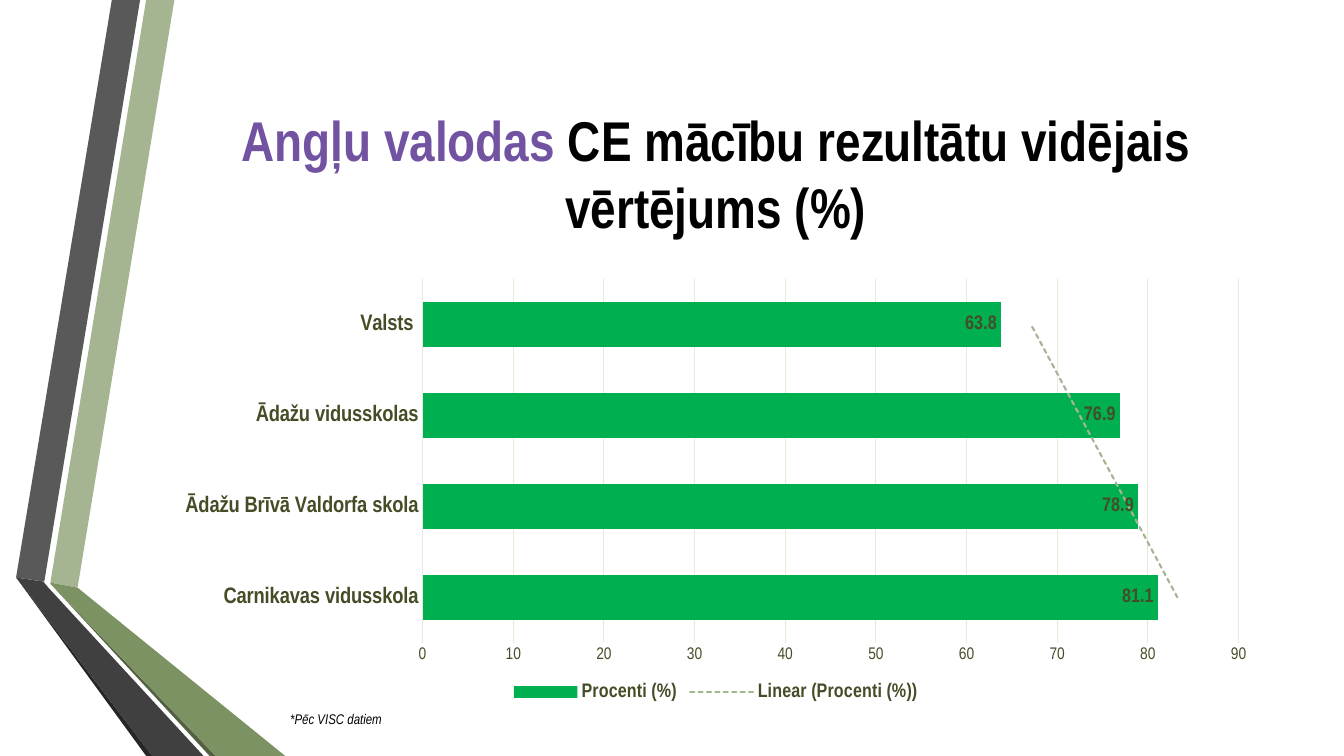
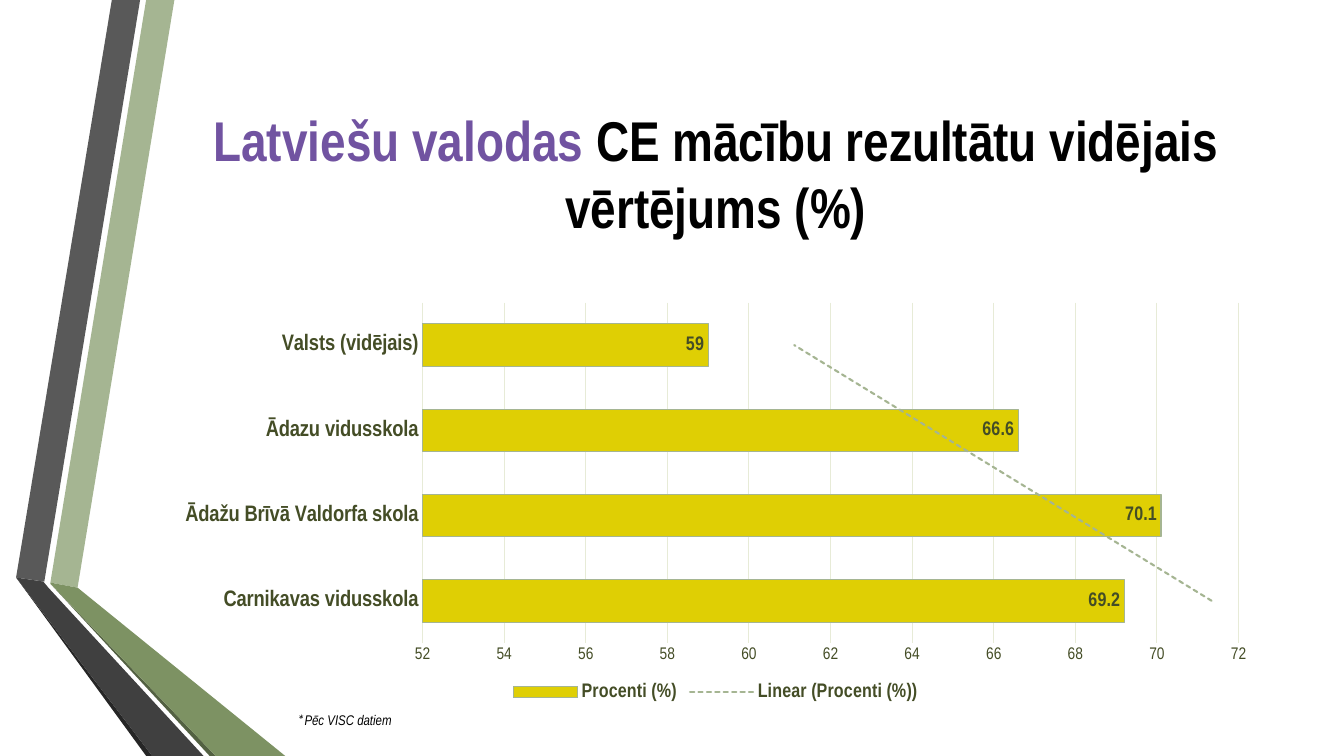
from lxml import etree
from pptx import Presentation
from pptx.chart.data import CategoryChartData
from pptx.dml.color import RGBColor
from pptx.enum.chart import XL_CHART_TYPE as ChartType
from pptx.enum.chart import XL_LABEL_POSITION as LabelPosition
from pptx.enum.chart import XL_LEGEND_POSITION as LegendPosition
from pptx.enum.chart import XL_TICK_MARK as TickMark
from pptx.enum.text import MSO_ANCHOR, MSO_AUTO_SIZE, PP_ALIGN
from pptx.oxml import parse_xml
from pptx.oxml.ns import nsdecls
from pptx.util import Inches, Pt

BLACK = RGBColor(0x00, 0x00, 0x00)
PURPLE = RGBColor(0x71, 0x53, 0xA1)
OLIVE = RGBColor(0x44, 0x4D, 0x26)
SAGE = RGBColor(0xA5, 0xB5, 0x92)
PALE = RGBColor(0xE7, 0xEB, 0xD7)
GREEN = RGBColor(0x00, 0xB0, 0x50)
YELLOW = RGBColor(0xDF, 0xCF, 0x04)

NARROW = "Arial Narrow"
BODY = "Calibri"
LEFT, WIDTH = 1.62, 10.96
CHART_BOTTOM = 7
SERIES = "Procenti (%)"

RIBBONS = [
    (SAGE, [(0.5, 5.78), (0.77, 5.83), (1.73, 0), (1.45, 0)]),
    (RGBColor(0x59, 0x59, 0x59), [(1.39, 0), (1.11, 0), (0.16, 5.73), (0.44, 5.77)]),
    (RGBColor(0x26, 0x26, 0x26), [(0.16, 5.73), (1.45, 7.5), (1.51, 7.5)]),
    (RGBColor(0x53, 0x61, 0x42), [(0.5, 5.79), (2.08, 7.5), (2.14, 7.5)]),
    (RGBColor(0x7D, 0x92, 0x63),
     [(0.5, 5.79), (2.14, 7.5), (2.83, 7.5), (0.77, 5.83), (0.5, 5.78)]),
    (RGBColor(0x40, 0x40, 0x40),
     [(2.02, 7.5), (0.48, 5.83), (0.43, 5.77), (0.16, 5.73), (1.51, 7.5)]),
]

SLIDES = [
    {
        "subject": "Angļu valodas ",
        "results": [("Carnikavas vidusskola", 81.1), ("Ādažu Brīvā Valdorfa skola", 78.9),
                    ("Ādažu vidusskolas", 76.9), ("Valsts ", 63.8)],
        "scale": (0, 90, 10),
        "chart_top": 2.68,
        "fill": GREEN,
        "outline": None,
        "note_left": 2.78,
        "note": [("*Pēc VISC datiem", NARROW, 10)],
    },
    {
        "subject": "Latviešu valodas ",
        "results": [("Carnikavas vidusskola", 69.2), ("Ādažu Brīvā Valdorfa skola", 70.1),
                    ("Ādazu vidusskola", 66.6), ("Valsts (vidējais)", 59)],
        "scale": (52, 72, 2),
        "chart_top": 2.92,
        "fill": YELLOW,
        "outline": SAGE,
        "note_left": 2.85,
        "note": [("*", BODY, 10.5), ("Pēc VISC datiem", NARROW, 10)],
    },
]

TRENDLINE = f"""
<c:trendline {nsdecls('c', 'a')}>
  <c:spPr><a:ln w="19050" cap="rnd">
    <a:solidFill><a:srgbClr val="{SAGE}"/></a:solidFill><a:prstDash val="sysDash"/>
  </a:ln></c:spPr>
  <c:trendlineType val="linear"/><c:dispRSqr val="0"/><c:dispEq val="0"/>
</c:trendline>"""


def set_font(font, size, color, name=NARROW, bold=False, italic=False):
    font.name, font.size = name, Pt(size)
    font.bold, font.italic = bold, italic
    font.color.rgb = color


def add_text_box(page, left, top, width, height):
    box = page.shapes.add_textbox(Inches(left), Inches(top), Inches(width), Inches(height))
    box.text_frame.word_wrap = True
    return box.text_frame


deck = Presentation()
deck.slide_width, deck.slide_height = Inches(13.33), Inches(7.5)
blank = deck.slide_layouts[6]

for content in SLIDES:
    page = deck.slides.add_slide(blank)

    for color, points in RIBBONS:
        corners = [(Inches(x), Inches(y)) for x, y in points]
        outline = page.shapes.build_freeform(*corners[0])
        outline.add_line_segments(corners[1:], close=True)
        ribbon = outline.convert_to_shape()
        ribbon.shadow.inherit = False
        ribbon.fill.solid()
        ribbon.fill.fore_color.rgb = color
        ribbon.line.fill.background()

    title = add_text_box(page, LEFT, 0.75, WIDTH, 1.92)
    title.vertical_anchor = MSO_ANCHOR.MIDDLE
    para = title.paragraphs[0]
    para.alignment = PP_ALIGN.CENTER
    for text, color in [(content["subject"], PURPLE),
                        ("CE mācību rezultātu vidējais vērtējums (%)", BLACK)]:
        span = para.add_run()
        span.text = text
        set_font(span.font, 40, color, bold=True)

    schools, percents = zip(*content["results"])
    data = CategoryChartData()
    data.categories = schools
    data.add_series(SERIES, percents)
    top = content["chart_top"]
    chart = page.shapes.add_chart(
        ChartType.BAR_CLUSTERED, Inches(LEFT), Inches(top),
        Inches(WIDTH), Inches(CHART_BOTTOM - top), data).chart
    set_font(chart.font, 10, BLACK, BODY)
    chart.has_title = False
    chart.has_legend = True
    chart.legend.position = LegendPosition.BOTTOM
    chart.legend.include_in_layout = False
    set_font(chart.legend.font, 14, OLIVE, bold=True)

    names, values = chart.category_axis, chart.value_axis
    for axis in (names, values):
        axis.major_tick_mark = axis.minor_tick_mark = TickMark.NONE
    set_font(names.tick_labels.font, 16, OLIVE, bold=True)
    set_font(values.tick_labels.font, 12, OLIVE)
    values.minimum_scale, values.maximum_scale, values.major_unit = content["scale"]
    values.format.line.fill.background()
    values.has_major_gridlines = True
    for line in (names.format.line, values.major_gridlines.format.line):
        line.color.rgb = PALE
        line.width = Pt(0.75)

    plot = chart.plots[0]
    plot.gap_width = 100
    plot.vary_by_categories = False
    bars = plot.series[0]
    bars.invert_if_negative = False
    bars.format.fill.solid()
    bars.format.fill.fore_color.rgb = content["fill"]
    if content["outline"]:
        bars.format.line.color.rgb = content["outline"]
        bars.format.line.width = Pt(0.75)
    else:
        bars.format.line.fill.background()
    labels = bars.data_labels
    labels.show_value = True
    labels.position = LabelPosition.INSIDE_END
    set_font(labels.font, 14, OLIVE, bold=True)
    bars._element.find("{*}cat").addprevious(parse_xml(TRENDLINE))

    note = add_text_box(page, content["note_left"], CHART_BOTTOM, 2.67, 0.27)
    note.auto_size = MSO_AUTO_SIZE.SHAPE_TO_FIT_TEXT
    for text, font_name, size in content["note"]:
        span = note.paragraphs[0].add_run()
        span.text = text
        set_font(span.font, size, BLACK, font_name, italic=True)

deck.save("out.pptx")
